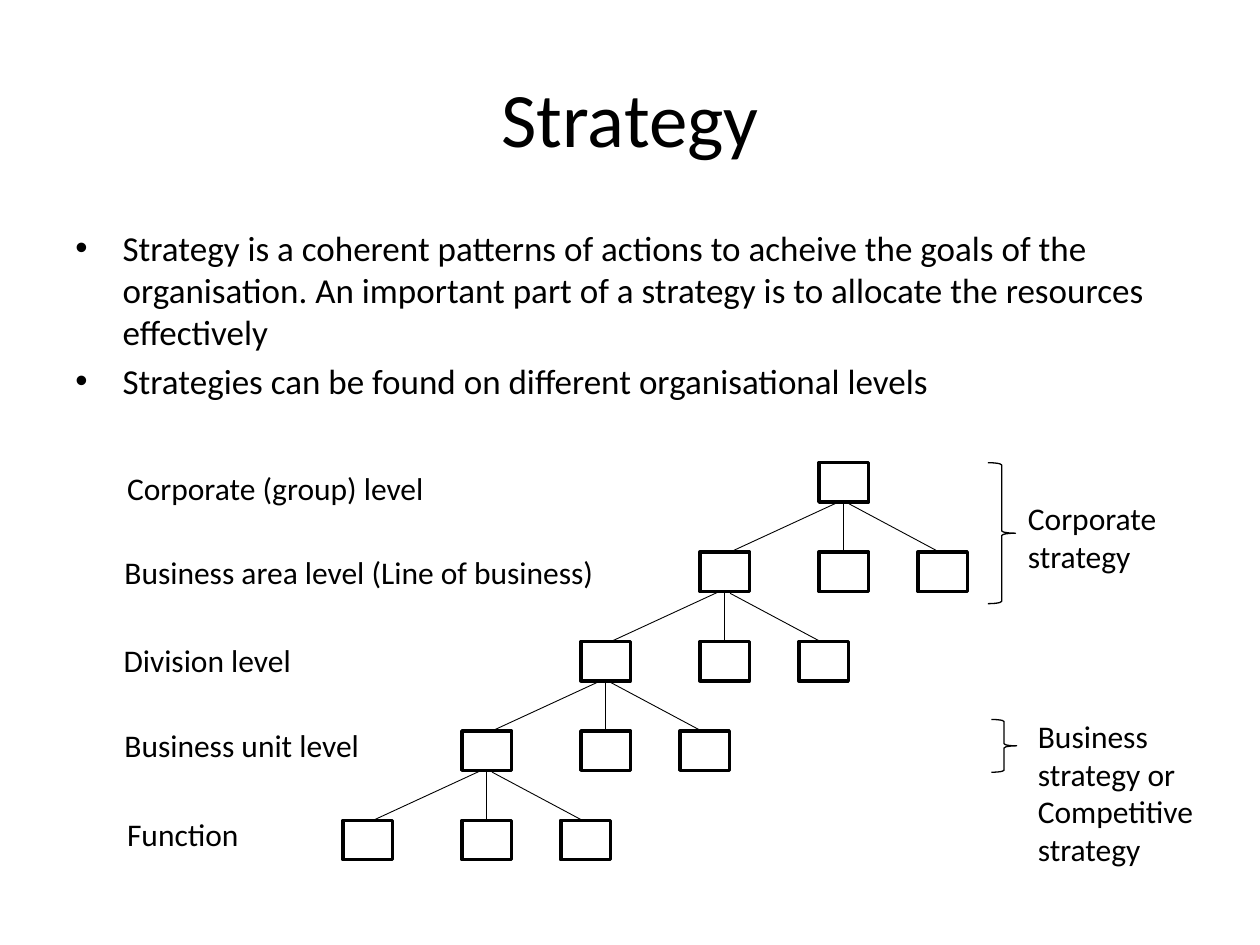
"""Build a slide on strategy with a tree of organisational levels."""
from lxml.etree import SubElement
from pptx import Presentation
from pptx.dml.color import RGBColor
from pptx.enum.shapes import MSO_CONNECTOR, MSO_SHAPE
from pptx.enum.text import MSO_ANCHOR, PP_ALIGN
from pptx.oxml.ns import qn
from pptx.util import Pt

BLACK = RGBColor(0, 0, 0)
WHITE = RGBColor(255, 255, 255)

BOX_WIDTH, BOX_HEIGHT = 28.3, 22.5
ROOT_LEFT, ROOT_TOP = 468, 264.4
STEP_LEFT, STEP_DOWN = 68, 51.1
CHILD_OFFSETS = (-STEP_LEFT, 0, 56.5)
BRANCHES = ((-3, -65, 0), (0, 0, 0), (3, 54.7, 1))

deck = Presentation()
deck.slide_width, deck.slide_height = Pt(720), Pt(540)
page = deck.slides.add_slide(deck.slide_layouts[6])


def add_text(place, lines, size, frame_format, para_format):
    box = page.shapes.add_textbox(*map(Pt, place))
    frame = box.text_frame
    for name, value in {"word_wrap": True, **frame_format}.items():
        setattr(frame, name, value)
    frame.text = "\n".join(lines)
    for para in frame.paragraphs:
        for name, value in para_format.items():
            setattr(para, name, value)
        for span in para.runs:
            for name, value in {"name": "Calibri", "size": Pt(size)}.items():
                setattr(span.font, name, value)
            span.font.color.rgb = BLACK
    return box


def add_outline(kind, place, weight):
    shape = page.shapes.add_shape(kind, *map(Pt, place))
    shape.shadow.inherit = False
    shape.line.color.rgb = BLACK
    shape.line.width = Pt(weight)
    return shape


add_text((36, 21.6, 648, 90), ["Strategy"], 44,
         {"vertical_anchor": MSO_ANCHOR.MIDDLE}, {"alignment": PP_ALIGN.CENTER})

body = add_text((36, 126, 648, 356.4), [
    "Strategy is a coherent patterns of actions to acheive the goals of the "
    "organisation. An important part of a strategy is to allocate the "
    "resources effectively",
    "Strategies can be found on different organisational levels",
], 20, {}, {"space_before": Pt(4)})
for para in body.text_frame.paragraphs:
    properties = para._p.get_or_add_pPr()
    for name, value in {"marL": Pt(27), "indent": -Pt(27)}.items():
        properties.set(name, str(value))
    SubElement(properties, qn("a:buFont"), typeface="Arial")
    SubElement(properties, qn("a:buChar"), char="•")

box_places = [(ROOT_LEFT, ROOT_TOP)]
for level in range(4):
    parent_left = ROOT_LEFT - level * STEP_LEFT
    parent_top = ROOT_TOP + level * STEP_DOWN
    center = parent_left + BOX_WIDTH / 2
    bottom = parent_top + BOX_HEIGHT
    child_top = parent_top + STEP_DOWN
    for start, end, drop in BRANCHES:
        branch = page.shapes.add_connector(
            MSO_CONNECTOR.STRAIGHT, Pt(center + start), Pt(bottom + drop),
            Pt(center + end), Pt(child_top))
        branch.line.color.rgb = BLACK
        branch.line.width = Pt(0.5)
        SubElement(branch._element.spPr, qn("a:effectLst"))
    box_places += [(parent_left + offset, child_top) for offset in CHILD_OFFSETS]

for left, top in box_places:
    box = add_outline(MSO_SHAPE.RECTANGLE, (left, top, BOX_WIDTH, BOX_HEIGHT), 2)
    box.fill.solid()
    box.fill.fore_color.rgb = WHITE

for place in ((566.6, 411.1, 14.4, 30.2), (564.5, 264.4, 15.8, 80.6)):
    brace = add_outline(MSO_SHAPE.RIGHT_BRACE, place, 0.75)
    brace.fill.background()

labels = (
    ("Corporate (group) level", (65.5, 264.4, 300, 29)),
    ("Business area level (Line of business)", (64, 312.5, 300, 29)),
    ("Division level", (63.5, 363, 300, 29)),
    ("Business unit level", (64, 411.1, 300, 29)),
    ("Function", (65.5, 462.3, 300, 29)),
    ("Corporate strategy", (580.3, 281.5, 103, 51)),
    ("Business strategy or Competitive strategy", (586, 406.1, 115.2, 94.3)),
)
for wording, place in labels:
    add_text(place, [wording], 18, {}, {})

deck.save("out.pptx")
